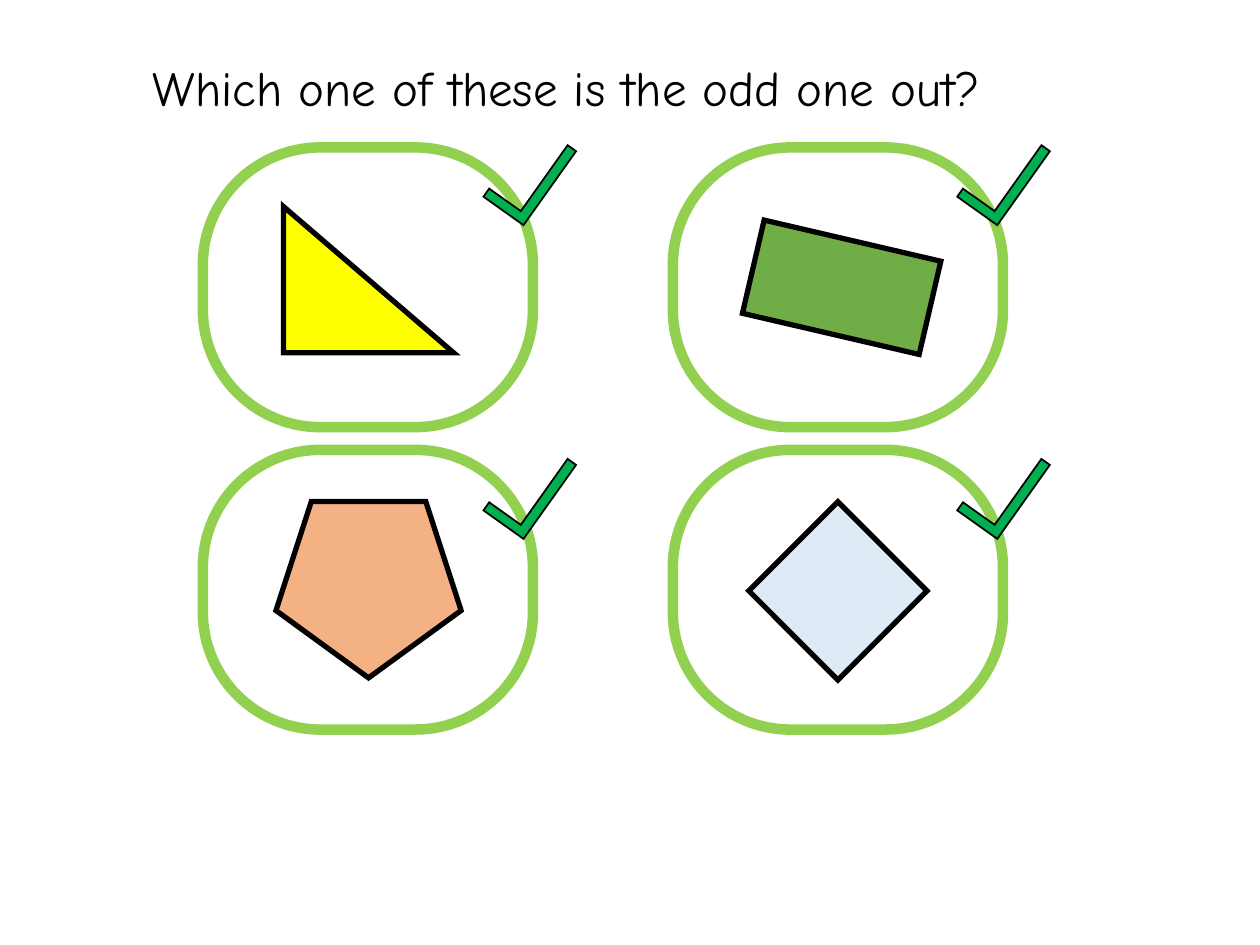
from dataclasses import dataclass
from itertools import product

from lxml import etree
from pptx import Presentation
from pptx.dml.color import RGBColor
from pptx.enum import shapes, text
from pptx.oxml import ns
from pptx.util import Inches, Pt

SHAPE = shapes.MSO_SHAPE


@dataclass(frozen=True)
class Theme:
    """Colours, type and line widths of the slide."""
    font: str = "Comic Neue"
    title_size: int = 28
    ink: str = "000000"
    frame: str = "92D050"
    tick: str = "00B050"
    yellow: str = "FFFF00"
    green: str = "70AD47"
    orange: str = "F4B183"
    pale_blue: str = "DEEBF7"
    frame_line: int = 6
    figure_line: int = 3
    tick_line: int = 1


THEME = Theme()


def add_outlined(slide, kind, box, fill, line, width, rotation=0, adjustments=()):
    """Add a preset shape with sharp line joins, filled unless fill is None."""
    shape = slide.shapes.add_shape(kind, *map(Inches, box))
    shape.shadow.inherit = False
    shape.rotation = rotation
    for index, value in enumerate(adjustments):
        shape.adjustments[index] = value
    if fill is None:
        shape.fill.background()
    else:
        shape.fill.solid()
        shape.fill.fore_color.rgb = RGBColor.from_string(fill)
    shape.line.color.rgb = RGBColor.from_string(line)
    shape.line.width = Pt(width)
    outline = shape._element.spPr.find(ns.qn("a:ln"))
    etree.SubElement(outline, ns.qn("a:miter")).set("lim", "800000")
    return shape


def add_title(slide, box, wording):
    """Write the centred question in its box."""
    title = slide.shapes.add_textbox(*map(Inches, box))
    frame = title.text_frame
    frame.word_wrap = True
    frame.auto_size = text.MSO_AUTO_SIZE.SHAPE_TO_FIT_TEXT
    frame.text = wording
    paragraph = frame.paragraphs[0]
    paragraph.alignment = text.PP_ALIGN.CENTER
    font = paragraph.runs[0].font
    font.name = THEME.font
    font.size = Pt(THEME.title_size)
    font.color.rgb = RGBColor.from_string(THEME.ink)


def add_card(slide, box, figure):
    """Draw a rounded frame with its figure placed from the frame's corner."""
    kind, (dx, dy, width, height), fill, rotation, adjustments = figure
    add_outlined(slide, SHAPE.ROUNDED_RECTANGLE, box, None, THEME.frame,
                 THEME.frame_line, adjustments=(0.42,))
    figure_box = (box[0] + dx, box[1] + dy, width, height)
    add_outlined(slide, kind, figure_box, fill, THEME.ink, THEME.figure_line,
                 rotation, adjustments)


def add_tick(slide, box):
    """Draw a tick as a mirrored, tilted corner shape."""
    tick = add_outlined(slide, SHAPE.CORNER, box, THEME.tick, THEME.ink,
                        THEME.tick_line, 35.4, (0.2, 0.21))
    tick._element.spPr.find(ns.qn("a:xfrm")).set("flipH", "1")


def build_odd_one_out(slide):
    """Lay out the question, four figure cards and their ticks."""
    add_title(slide, (0.12, 0.41, 8.75, 0.57), "Which one of these is the odd one out?")
    figures = (
        (SHAPE.ISOSCELES_TRIANGLE, (0.64, 0.47, 1.35, 1.16), THEME.yellow, 0, (0,)),
        (SHAPE.RECTANGLE, (0.62, 0.73, 1.44, 0.76), THEME.green, 13.1, ()),
        (SHAPE.REGULAR_PENTAGON, (0.58, 0.41, 1.47, 1.4), THEME.orange, 180, ()),
        (SHAPE.RECTANGLE, (0.81, 0.62, 1, 1), THEME.pale_blue, 45, ()),
    )
    for (top, left), figure in zip(product((1.17, 3.57), (1.61, 5.34)), figures):
        add_card(slide, (left, top, 2.62, 2.22), figure)
    for top, left in product((1.02, 3.51), (4.01, 7.77)):
        add_tick(slide, (left, top, 0.39, 0.72))


def main():
    """Build and save the presentation."""
    presentation = Presentation()
    presentation.slide_width = Inches(10)
    presentation.slide_height = Inches(7.5)
    build_odd_one_out(presentation.slides.add_slide(presentation.slide_layouts[6]))
    presentation.save("out.pptx")


if __name__ == "__main__":
    main()
